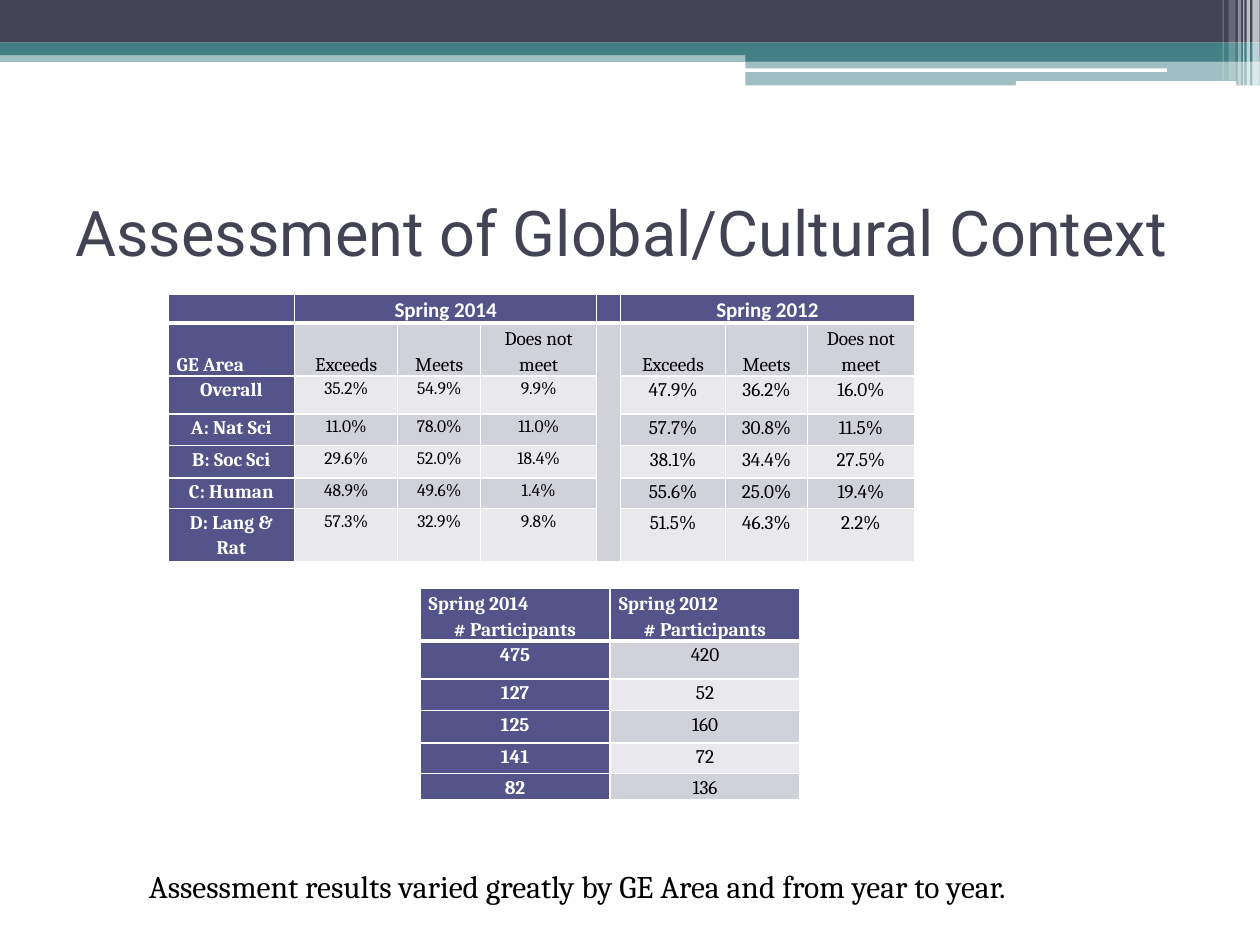
from pptx import Presentation, util as u
from pptx.dml.color import RGBColor
from pptx.enum import shapes, text
from pptx.oxml import ns
from lxml import etree

THEME = {
    "navy": "424456", "teal": "438086", "white": "FFFFFF", "black": "000000",
    "purple": "53548A", "band_dark": "D1D1DA", "band_light": "E9E9ED",
    "title_font": "Roboto", "body_font": "Cambria", "head_font": "Calibri",
    "title_size": 36, "caption_size": 18, "head_size": 12, "cell_size": 11, "small_size": 10,
}
PAGE_WIDTH, PAGE_HEIGHT = 720, 540
TITLE = "Assessment of Global/Cultural Context"
CAPTION = "Assessment results varied greatly by GE Area and from year to year."

# left, top, width, height, colour, opacity in percent
BANNER = [
    (0, 28.8, 720, 6.6, "teal", 50),
    (0, 0, 720, 24.4, "navy", 100),
    (0, 24.4, 720, 7.2, "teal", 100),
    (426, 28, 294, 7.2, "teal", 100),
    (426, 35.2, 294, 13.6, "teal", 50),
]
RULES = [(425.6, 39.1, 241.2, 2), (580.5, 46.4, 126, 2.7)]
# left, width, height, opacity in percent
STRIPES = [
    (715.6, 4.2, 49, 65), (712.3, 2, 49, 65), (710.4, 0.7, 49, 60),
    (707.3, 2, 49, 40), (702, 4, 46, 20), (698.6, 0.7, 46, 30),
]

MEASURES = ["Exceeds", "Meets", "Does not meet"]
RESULTS = [
    ["", "Spring 2014", "", "", "", "Spring 2012", "", ""],
    ["GE Area", *MEASURES, "", *MEASURES],
    ["Overall", "35.2%", "54.9%", "9.9%", "", "47.9%", "36.2%", "16.0%"],
    ["A: Nat Sci", "11.0%", "78.0%", "11.0%", "", "57.7%", "30.8%", "11.5%"],
    ["B: Soc Sci", "29.6%", "52.0%", "18.4%", "", "38.1%", "34.4%", "27.5%"],
    ["C: Human", "48.9%", "49.6%", "1.4%", "", "55.6%", "25.0%", "19.4%"],
    ["D: Lang & Rat", "57.3%", "32.9%", "9.8%", "", "51.5%", "46.3%", "2.2%"],
]
RESULT_COLUMNS = [72.4, 58.9, 47.4, 66.3, 13.7, 60, 46.8, 61.1]
RESULT_MERGES = [(0, 1, 0, 3), (0, 5, 0, 7), (1, 4, 6, 4)]
GAP_COLUMN = 4

PARTICIPANTS = [
    ["Spring 2014\n# Participants", "Spring 2012\n# Participants"],
    ["475", "420"], ["127", "52"], ["125", "160"], ["141", "72"], ["82", "136"],
]
PARTICIPANT_COLUMNS = [108.6, 108.6]
AREA_ROWS = [21.6, 18, 18.7, 17.3, 15]

LEFT, CENTER = text.PP_ALIGN.LEFT, text.PP_ALIGN.CENTER
TOP, MIDDLE, BOTTOM = (text.MSO_ANCHOR.TOP, text.MSO_ANCHOR.MIDDLE, text.MSO_ANCHOR.BOTTOM)


def colour(name):
    return RGBColor.from_string(THEME[name])


def write(frame, words, font="body_font", size="cell_size", ink="black", bold=False,
          aligns=(LEFT,), spacing=None):
    """Write one paragraph per line of words; aligns holds one entry per line."""
    for index, (line, align) in enumerate(zip(words.split("\n"), aligns)):
        para = frame.paragraphs[0] if index == 0 else frame.add_paragraph()
        para.alignment = align
        if spacing:
            para.line_spacing = spacing
        if line:
            span = para.add_run()
            span.text = line
            span.font.name, span.font.size = THEME[font], u.Pt(THEME[size])
            span.font.color.rgb, span.font.bold = colour(ink), bold
        else:  # keeps an empty cell from growing to the default type size
            etree.SubElement(para._p, ns.qn("a:endParaRPr"), sz=str(THEME[size] * 100))


def add_bar(page, left, top, width, height, fill, opacity=100, rounded=False):
    kind = shapes.MSO_SHAPE.ROUNDED_RECTANGLE if rounded else shapes.MSO_SHAPE.RECTANGLE
    bar = page.shapes.add_shape(kind, *map(u.Pt, (left, top, width, height)))
    bar.shadow.inherit = False
    bar.line.fill.background()
    bar.fill.solid()
    bar.fill.fore_color.rgb = colour(fill)
    if opacity < 100:
        tint = bar._element.spPr.find(f".//{ns.qn('a:srgbClr')}")
        etree.SubElement(tint, ns.qn("a:alpha"), val=str(opacity * 1000))


def add_text(page, words, left, top, width, height, anchor=TOP, **style):
    box = page.shapes.add_textbox(*map(u.Pt, (left, top, width, height)))
    box.text_frame.word_wrap = True
    box.text_frame.vertical_anchor = anchor
    write(box.text_frame, words, **style)


def set_borders(cell, bottom_width):
    """Draw white cell borders; they must come before the fill in the cell's XML."""
    props = cell._tc.get_or_add_tcPr()
    for index, (side, width) in enumerate([("L", 1), ("R", 1), ("T", 1), ("B", bottom_width)]):
        line = etree.Element(ns.qn(f"a:ln{side}"), w=str(u.Pt(width)))
        fill = etree.SubElement(line, ns.qn("a:solidFill"))
        etree.SubElement(fill, ns.qn("a:srgbClr"), val=THEME["white"])
        props.insert(index, line)


def add_grid(page, left, top, columns, heights, rows, cell_style, merges=()):
    """Add a table with a purple head row and stub column; cell_style varies the text."""
    frame = page.shapes.add_table(len(rows), len(columns),
                                  *map(u.Pt, (left, top, sum(columns), sum(heights))))
    table = frame.table
    for column, width in zip(table.columns, columns):
        column.width = u.Pt(width)
    for row, height in zip(table.rows, heights):
        row.height = u.Pt(height)
    for r, row in enumerate(rows):
        for c, words in enumerate(row):
            cell = table.cell(r, c)
            strong = r == 0 or c == 0
            cell.margin_left = cell.margin_right = u.Pt(5)
            cell.margin_top = cell.margin_bottom = 0
            cell.fill.solid()
            band = "band_dark" if r % 2 else "band_light"
            cell.fill.fore_color.rgb = colour("purple" if strong else band)
            set_borders(cell, 3 if r == 0 else 1)
            style = {"anchor": TOP, "aligns": (CENTER,), "bold": strong,
                     "ink": "white" if strong else "black", **cell_style(r, c)}
            cell.vertical_anchor = style.pop("anchor")
            write(cell.text_frame, words, spacing=1.15, **style)
    for r1, c1, r2, c2 in merges:
        table.cell(r1, c1).merge(table.cell(r2, c2))


def result_style(r, c):
    if r == 0:
        return {"anchor": BOTTOM, "font": "head_font", "size": "head_size"}
    if r == 1:
        return {"anchor": BOTTOM, "aligns": (LEFT if c == 0 else CENTER,)}
    return {"size": "small_size"} if 0 < c <= GAP_COLUMN else {}


def participant_style(r, c):
    return {"anchor": BOTTOM, "aligns": (LEFT, CENTER)} if r == 0 else {}


def main():
    deck = Presentation()
    deck.slide_width, deck.slide_height = u.Pt(PAGE_WIDTH), u.Pt(PAGE_HEIGHT)
    page = deck.slides.add_slide(deck.slide_layouts[6])
    for bar in BANNER:
        add_bar(page, *bar)
    for rule in RULES:
        add_bar(page, *rule, "white", rounded=True)
    for left, width, height, opacity in STRIPES:
        add_bar(page, left, 0, width, height, "white", opacity)
    add_text(page, TITLE, 36, 90, 648, 84, anchor=MIDDLE,
             font="title_font", size="title_size", ink="navy")
    add_grid(page, 96, 168, RESULT_COLUMNS, [15, 15, *AREA_ROWS], RESULTS,
             result_style, RESULT_MERGES)
    add_grid(page, 240, 336, PARTICIPANT_COLUMNS, [29.5, *AREA_ROWS], PARTICIPANTS,
             participant_style)
    add_text(page, CAPTION, 78, 492, 563, 29, size="caption_size")
    deck.save("out.pptx")


if __name__ == "__main__":
    main()
